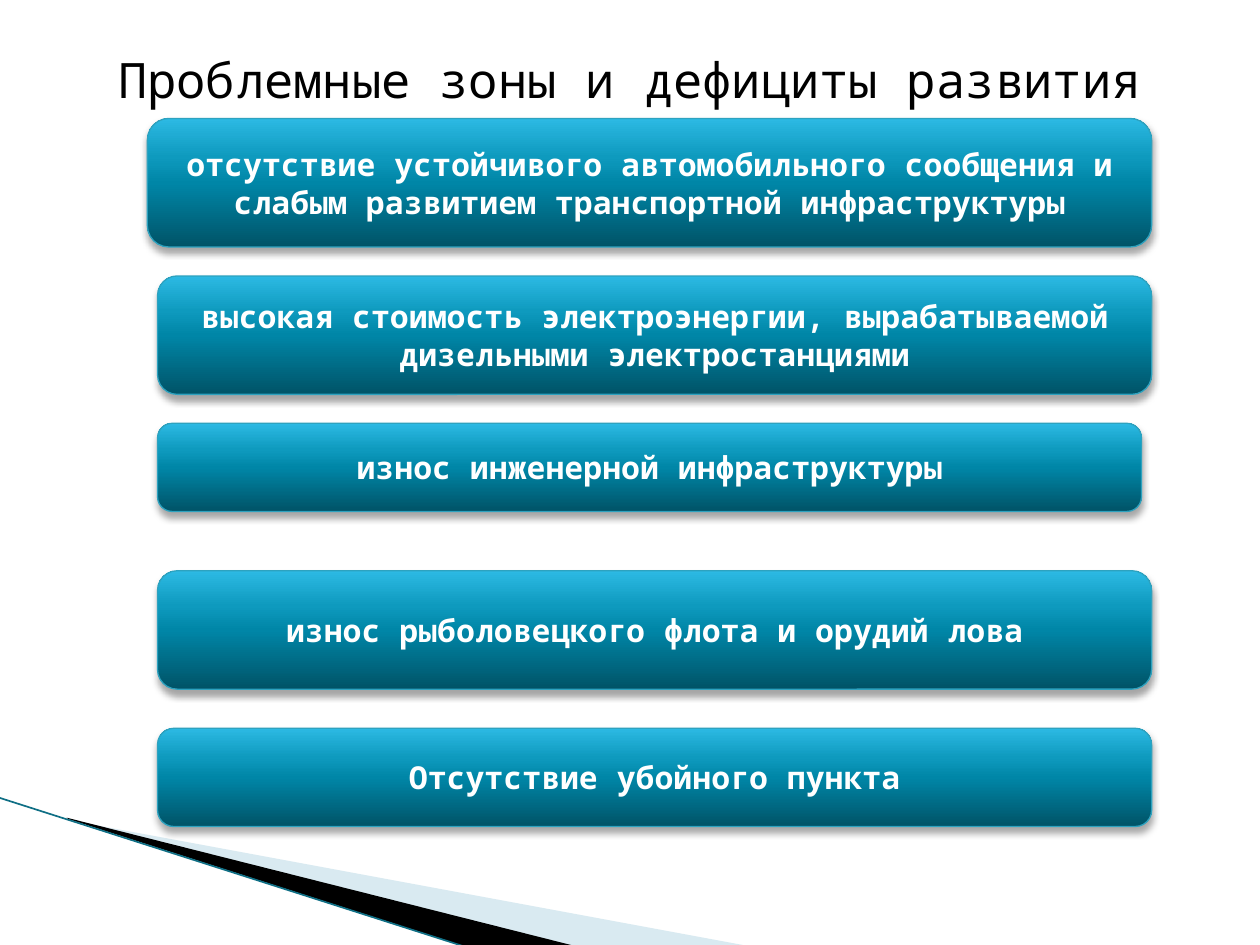
from lxml.etree import SubElement
from pptx import Presentation
from pptx.dml.color import RGBColor
from pptx.enum.shapes import MSO_CONNECTOR, MSO_SHAPE
from pptx.enum.text import MSO_ANCHOR, PP_ALIGN
from pptx.oxml.ns import qn
from pptx.util import Inches, Pt

FONT = "Noto Sans Mono"
HEX = {"black": "000000", "white": "FFFFFF", "pale": "A0CBDC",
       "edge": "2DA2BF", "teal": "0F6F85"}
GRADE = [(0, "005367"), (50, "0086A7"), (70, "0E9ABE"), (100, "2CB9E3")]
TITLE = "Проблемные зоны и дефициты развития"
CARDS = [
    ("отсутствие устойчивого автомобильного сообщения и слабым развитием "
     "транспортной инфраструктуры", (1.17, 0.94, 7.97, 1.02)),
    ("высокая стоимость электроэнергии, вырабатываемой дизельными "
     "электростанциями", (1.25, 2.19, 7.89, 0.94)),
    ("износ инженерной инфраструктуры", (1.25, 3.36, 7.81, 0.7)),
    ("износ рыболовецкого флота и орудий лова", (1.25, 4.53, 7.89, 0.94)),
    ("Отсутствие убойного пункта", (1.25, 5.78, 7.89, 0.78)),
]
WEDGES = [
    ("pale", 40, [(0.55, 6.51), (5.95, 7.51), (4.56, 7.51), (0.55, 6.5)]),
    ("black", 100, [(0.53, 6.49), (4.57, 7.51), (3.72, 7.52), (0.54, 6.5)]),
]
STREAK = (-0.01, 6.33, 3.71, 7.52)


def color(name):
    return RGBColor.from_string(HEX[name])


def write(shape, text, size, tint, bold=False):
    """Put one centred run in a shape."""
    frame = shape.text_frame
    frame.word_wrap = True
    frame.vertical_anchor = MSO_ANCHOR.MIDDLE
    para = frame.paragraphs[0]
    para.alignment = PP_ALIGN.CENTER
    run = para.add_run()
    run.text = text
    run.font.name, run.font.size, run.font.bold = FONT, Pt(size), bold
    run.font.color.rgb = color(tint)


def add_wedge(slide, tint, alpha, points):
    points = [(Inches(x), Inches(y)) for x, y in points]
    path = slide.shapes.build_freeform(*points[0], scale=1.0)
    path.add_line_segments(points[1:], close=True)
    wedge = path.convert_to_shape()
    wedge.shadow.inherit = False
    wedge.line.fill.background()
    wedge.fill.solid()
    wedge.fill.fore_color.rgb = color(tint)
    if alpha < 100:
        rgb = wedge.fill._xPr.find(".//" + qn("a:srgbClr"))
        SubElement(rgb, qn("a:alpha"), val=str(alpha * 1000))


def add_streak(slide):
    line = slide.shapes.add_connector(
        MSO_CONNECTOR.STRAIGHT, *map(Inches, STREAK))
    line.line.color.rgb = color("teal")
    line.line.width = Pt(0.95)
    SubElement(line._element.spPr, qn("a:effectLst"))


def add_card(slide, text, box):
    card = slide.shapes.add_shape(
        MSO_SHAPE.ROUNDED_RECTANGLE, *map(Inches, box))
    card.fill.gradient()
    card.fill.gradient_angle = 90
    props = card._element.spPr
    stops = props.find(".//" + qn("a:gsLst"))
    for stop in list(stops):
        stops.remove(stop)
    for pos, tint in GRADE:
        stop = SubElement(stops, qn("a:gs"), pos=str(pos * 1000))
        SubElement(stop, qn("a:srgbClr"), val=tint)
    card.line.color.rgb = color("edge")
    card.line.width = Pt(0.75)
    card.shadow.inherit = False
    shade = SubElement(props.find(qn("a:effectLst")), qn("a:outerShdw"),
                       blurRad=str(Pt(4)), dist=str(Pt(3)),
                       dir="5400000", rotWithShape="0")
    rgb = SubElement(shade, qn("a:srgbClr"), val=HEX["black"])
    SubElement(rgb, qn("a:alpha"), val="35000")
    write(card, text, 18, "white", True)


def main():
    deck = Presentation()
    deck.slide_width, deck.slide_height = Inches(10), Inches(7.5)
    slide = deck.slides.add_slide(deck.slide_layouts[6])
    for wedge in WEDGES:
        add_wedge(slide, *wedge)
    add_streak(slide)
    title = slide.shapes.add_textbox(*map(Inches, (0.5, 0.35, 9, 0.55)))
    write(title, TITLE, 27.9, "black")
    for text, box in CARDS:
        add_card(slide, text, box)
    deck.save("out.pptx")


if __name__ == "__main__":
    main()
